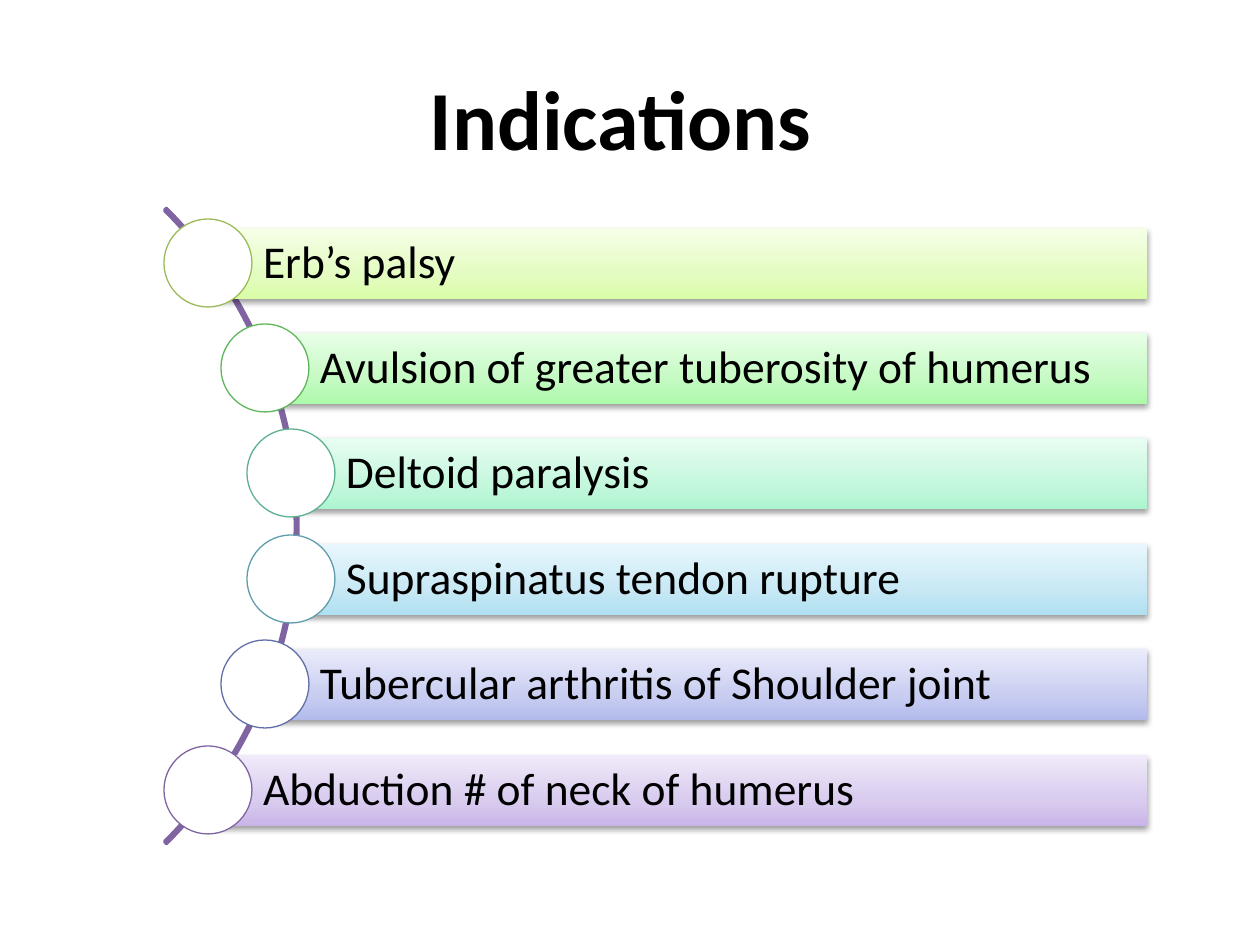
"""Build the Indications slide: a curved list of six bars with round markers."""
import pptx
import pptx.util
import pptx.dml.color
import pptx.enum.shapes
import pptx.enum.text
import pptx.oxml
import pptx.oxml.ns
import copy

RGB = pptx.dml.color.RGBColor
SHAPE = pptx.enum.shapes.MSO_SHAPE
ALIGN = pptx.enum.text.PP_ALIGN
MIDDLE = pptx.enum.text.MSO_ANCHOR.MIDDLE

BLACK = RGB(0x00, 0x00, 0x00)
WHITE = RGB(0xFF, 0xFF, 0xFF)
PURPLE = RGB(0x80, 0x64, 0xA2)
OLIVE = RGB(0x9B, 0xBB, 0x59)
GREEN = RGB(0x5F, 0xB6, 0x5B)
TEAL = RGB(0x5D, 0xB1, 0x8E)
CYAN = RGB(0x5F, 0x9D, 0xAC)
BLUE = RGB(0x62, 0x6E, 0xA7)
OLIVES = RGB(0xDA, 0xFD, 0xA7), RGB(0xE4, 0xFC, 0xC2), RGB(0xF5, 0xFF, 0xE7)
GREENS = RGB(0xAC, 0xF9, 0xAA), RGB(0xC5, 0xFA, 0xC3), RGB(0xE8, 0xFE, 0xE7)
TEALS = RGB(0xAC, 0xF5, 0xD0), RGB(0xC5, 0xF7, 0xDD), RGB(0xE8, 0xFD, 0xF2)
CYANS = RGB(0xAF, 0xE0, 0xF1), RGB(0xC7, 0xE8, 0xF4), RGB(0xE9, 0xF7, 0xFC)
BLUES = RGB(0xB2, 0xBA, 0xEC), RGB(0xC9, 0xCE, 0xF1), RGB(0xEA, 0xEC, 0xFA)
PURPLES = RGB(0xC9, 0xB5, 0xE8), RGB(0xD8, 0xCB, 0xEE), RGB(0xF0, 0xEA, 0xF9)

SCALE = 914400 / 126
TOP, SPAN, RIGHT, HIGH, ROUND = 228, 527, 1147, 71, 88
STOPS = 0, 0.35, 1
SHADOW = (
    f'<a:outerShdw {pptx.oxml.ns.nsdecls("a")} blurRad="40000" dist="20000" '
    'dir="5400000" rotWithShape="0"><a:srgbClr val="000000">'
    '<a:alpha val="38000"/></a:srgbClr></a:outerShdw>'
)
ITEMS = [
    ("Erb’s palsy", 208, OLIVE, OLIVES),
    ("Avulsion of greater tuberosity of humerus", 265, GREEN, GREENS),
    ("Deltoid paralysis", 291, TEAL, TEALS),
    ("Supraspinatus tendon rupture", 291, CYAN, CYANS),
    ("Tubercular arthritis of Shoulder joint", 265, BLUE, BLUES),
    ("Abduction # of neck of humerus", 208, PURPLE, PURPLES),
]


def px(n):
    """Turn pixels into EMU."""
    return pptx.util.Emu(round(n * SCALE))


def apply(thing, **kit):
    """Set each given attribute on a thing."""
    for name, value in kit.items():
        setattr(thing, name, value)


def write(para, text, size, bold=False):
    """Put one styled run in a paragraph."""
    run = para.add_run()
    run.text = text
    apply(run.font, name="Calibri", size=pptx.util.Pt(size), bold=bold)
    run.font.color.rgb = BLACK


def draw(slide, kind, *box):
    """Add a preset shape without shadow."""
    shape = slide.shapes.add_shape(kind, *map(px, box))
    shape.shadow.inherit = False
    return shape


def outline(shape, color, width):
    """Give a shape a solid line."""
    shape.line.color.rgb = color
    shape.line.width = pptx.util.Pt(width)


def add_title(slide, text):
    """Place and fill the title."""
    title = slide.shapes.title
    apply(title, left=px(63), top=px(38), width=px(1134), height=px(157))
    title.text_frame.vertical_anchor = MIDDLE
    para = title.text_frame.paragraphs[0]
    para.alignment = ALIGN.CENTER
    write(para, text, 48, True)


def add_arc(slide):
    """Draw the arc that joins the markers."""
    arc = draw(slide, SHAPE.BLOCK_ARC, -600, 77, 898, 898)
    for i, value in enumerate((189, 27, 0.003)):
        arc.adjustments[i] = value
    arc.fill.background()
    outline(arc, PURPLE, 2)


def shade(shape, tints):
    """Fill a shape with a three-stop gradient from the bottom up."""
    shape.fill.gradient()
    shape.fill.gradient_angle = 90
    last = shape.element.findall(".//" + pptx.oxml.ns.qn("a:gs"))[-1]
    last.addnext(copy.deepcopy(last))
    for stop, place, tint in zip(shape.fill.gradient_stops, STOPS, tints):
        stop.position = place
        stop.color.rgb = tint


def add_bar(slide, text, left, top, tints):
    """Draw a shaded bar with its text."""
    bar = draw(slide, SHAPE.RECTANGLE, left, top, RIGHT - left, HIGH)
    shade(bar, tints)
    bar.line.fill.background()
    glow = bar.element.spPr.find(pptx.oxml.ns.qn("a:effectLst"))
    glow.append(pptx.oxml.parse_xml(SHADOW))
    frame = bar.text_frame
    apply(frame, margin_left=px(55), margin_top=px(9), margin_right=px(9),
          margin_bottom=px(9), vertical_anchor=MIDDLE, word_wrap=True)
    para = frame.paragraphs[0]
    apply(para, alignment=ALIGN.LEFT, line_spacing=0.9)
    write(para, text, 26)


def add_disc(slide, left, top, color):
    """Draw the round marker at the start of a bar."""
    disc = draw(slide, SHAPE.OVAL, left - ROUND // 2, top - 9, ROUND, ROUND)
    disc.fill.solid()
    disc.fill.fore_color.rgb = WHITE
    outline(disc, color, 0.75)


def main():
    """Build and save the slide."""
    deck = pptx.Presentation()
    apply(deck, slide_width=px(1260), slide_height=px(945))
    slide = deck.slides.add_slide(deck.slide_layouts[5])
    add_title(slide, "Indications ")
    add_arc(slide)
    for i, (text, left, color, tints) in enumerate(ITEMS):
        top = TOP + SPAN * i // (len(ITEMS) - 1)
        add_bar(slide, text, left, top, tints)
        add_disc(slide, left, top, color)
    deck.save("out.pptx")


if __name__ == "__main__":
    main()
